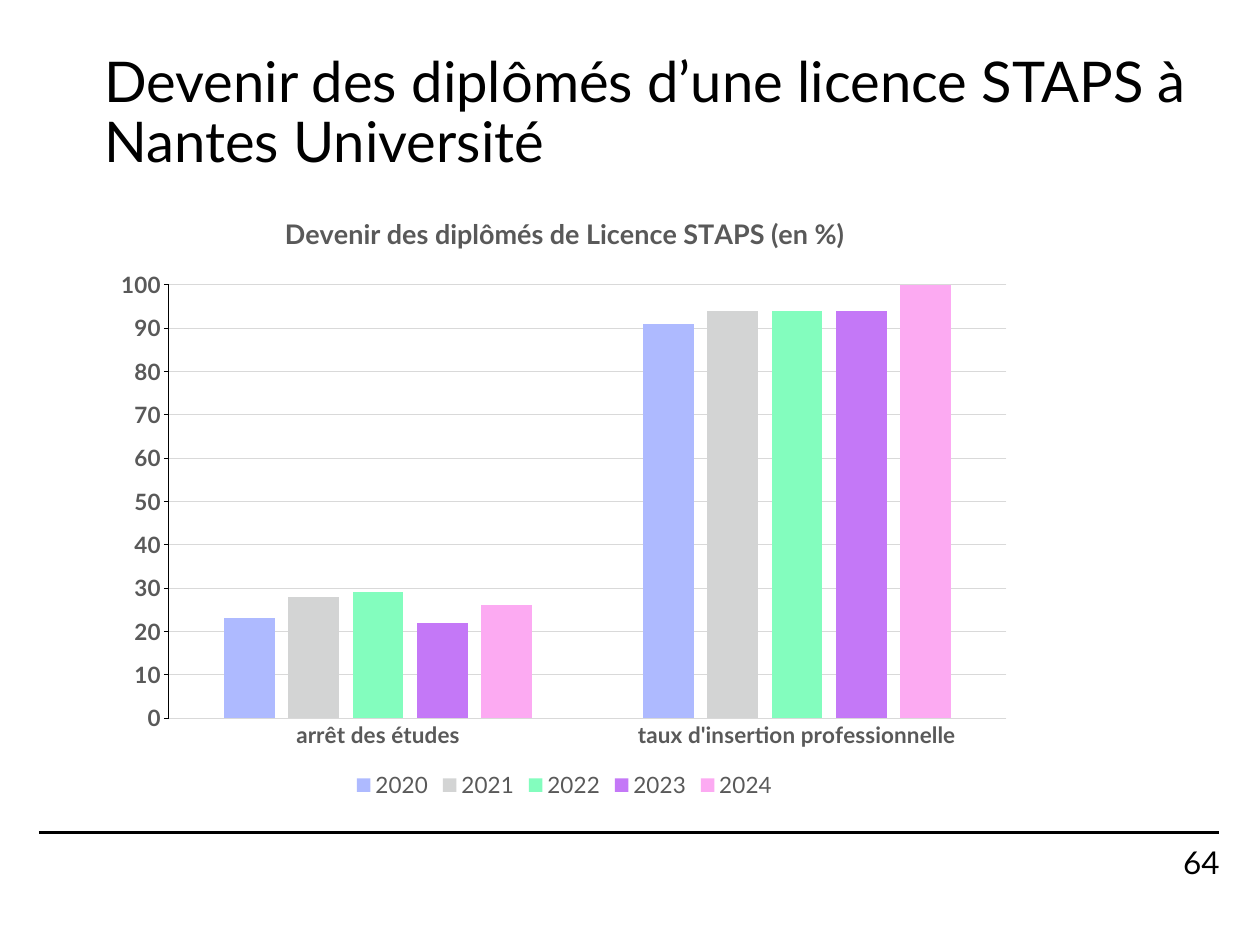
from dataclasses import dataclass

from lxml import etree
from pptx import Presentation
from pptx.chart.data import CategoryChartData
from pptx.dml.color import RGBColor
from pptx.enum.chart import XL_CHART_TYPE, XL_LEGEND_POSITION, XL_TICK_MARK
from pptx.enum.shapes import MSO_CONNECTOR
from pptx.enum.text import MSO_ANCHOR, PP_ALIGN
from pptx.oxml.ns import qn
from pptx.util import Inches, Pt

COLUMNS = XL_CHART_TYPE.COLUMN_CLUSTERED
LEGEND_BOTTOM = XL_LEGEND_POSITION.BOTTOM
TICK_NONE, TICK_OUTSIDE = XL_TICK_MARK.NONE, XL_TICK_MARK.OUTSIDE
STRAIGHT = MSO_CONNECTOR.STRAIGHT
MIDDLE = MSO_ANCHOR.MIDDLE
LEFT, RIGHT = PP_ALIGN.LEFT, PP_ALIGN.RIGHT


@dataclass(frozen=True)
class Theme:
    font: str = "Lato"
    ink: str = "000000"
    label: str = "595959"
    grid: str = "D9D9D9"
    title_size: int = 50
    number_size: int = 28
    chart_title_size: int = 24
    chart_size: int = 20
    rule_width: float = 2
    hairline: float = 0.75


THEME = Theme()

CATEGORIES = ["arrêt des études", "taux d'insertion professionnelle"]
# Year, values in percent, column colour
YEARS = [
    ("2020", (23, 91), "AEBAFF"),
    ("2021", (28, 94), "D3D4D4"),
    ("2022", (29, 94), "83FDBE"),
    ("2023", (22, 94), "C478F7"),
    ("2024", (26, 100), "FCAAF2"),
]
# Plot area as fractions of the chart frame
PLOT_AREA = {"x": 0.07, "y": 0.15, "w": 0.91, "h": 0.71}


def set_font(font, size, color, bold=False):
    font.name = THEME.font
    font.size = Pt(size)
    font.bold = bold
    font.color.rgb = RGBColor.from_string(color)


def set_line(line, color, width):
    line.color.rgb = RGBColor.from_string(color)
    line.width = Pt(width)


def place(shape, left, top, width, height):
    shape.left, shape.top = Inches(left), Inches(top)
    shape.width, shape.height = Inches(width), Inches(height)


def write_text(shape, text, size, alignment):
    frame = shape.text_frame
    frame.word_wrap = True
    frame.vertical_anchor = MIDDLE
    frame.margin_left = frame.margin_right = 0
    frame.margin_top = frame.margin_bottom = 0
    paragraph = frame.paragraphs[0]
    paragraph.text = text
    paragraph.alignment = alignment
    set_font(paragraph.font, size, THEME.ink)
    return paragraph


def add_title(slide, text):
    title = slide.shapes.title
    place(title, 1.29, 0.44, 13.73, 1.95)
    paragraph = write_text(title, text, THEME.title_size, LEFT)
    paragraph.line_spacing = 0.9


def add_footer(slide, number):
    rule = slide.shapes.add_connector(
        STRAIGHT, Inches(0.48), Inches(10.3), Inches(15.08), Inches(10.3))
    set_line(rule.line, THEME.ink, THEME.rule_width)
    etree.SubElement(rule.line._get_or_add_ln().getparent(), qn("a:effectLst"))
    box = slide.shapes.add_textbox(
        Inches(12.8), Inches(10.43), Inches(2.29), Inches(0.47))
    write_text(box, number, THEME.number_size, RIGHT)


def set_plot_layout(chart):
    plot_area = chart._chartSpace.chart.plotArea
    for old_layout in plot_area.findall(qn("c:layout")):
        plot_area.remove(old_layout)
    layout = etree.Element(qn("c:layout"))
    plot_area.insert(0, layout)
    manual = etree.SubElement(layout, qn("c:manualLayout"))
    settings = {"layoutTarget": "inner", "xMode": "edge", "yMode": "edge"}
    for tag, value in {**settings, **PLOT_AREA}.items():
        etree.SubElement(manual, qn(f"c:{tag}")).set("val", str(value))


def format_axis(axis, tick_mark, line_color):
    axis.major_tick_mark = tick_mark
    axis.minor_tick_mark = TICK_NONE
    set_line(axis.format.line, line_color, THEME.hairline)
    set_font(axis.tick_labels.font, THEME.chart_size, THEME.label, bold=True)


def add_outcome_chart(slide):
    data = CategoryChartData(number_format="0")
    data.categories = CATEGORIES
    for year, values, _ in YEARS:
        data.add_series(year, values)
    chart = slide.shapes.add_chart(
        COLUMNS, Inches(1.29), Inches(2.39), Inches(11.39), Inches(7.55),
        data).chart
    set_font(chart.font, THEME.chart_size, THEME.ink)

    # Chart title and legend
    chart.has_title = True
    paragraph = chart.chart_title.text_frame.paragraphs[0]
    paragraph.text = "Devenir des diplômés de Licence STAPS (en %)"
    set_font(paragraph.font, THEME.chart_title_size, THEME.label, bold=True)
    chart.chart_title.include_in_layout = False
    chart.has_legend = True
    chart.legend.position = LEGEND_BOTTOM
    chart.legend.include_in_layout = False
    set_font(chart.legend.font, THEME.chart_size, THEME.label)

    # Axes
    format_axis(chart.category_axis, TICK_NONE, THEME.grid)
    value_axis = chart.value_axis
    format_axis(value_axis, TICK_OUTSIDE, THEME.ink)
    value_axis.minimum_scale, value_axis.maximum_scale = 0, 100
    value_axis.major_unit = 10
    value_axis.tick_labels.number_format = "0"
    value_axis.tick_labels.number_format_is_linked = False
    set_line(value_axis.major_gridlines.format.line, THEME.grid, THEME.hairline)

    # Columns
    plot = chart.plots[0]
    plot.gap_width, plot.overlap = 219, -27
    plot.vary_by_categories = False
    for series, (_, _, color) in zip(plot.series, YEARS):
        series.format.fill.solid()
        series.format.fill.fore_color.rgb = RGBColor.from_string(color)
    set_plot_layout(chart)


def main():
    presentation = Presentation()
    presentation.slide_width = Inches(15.59)
    presentation.slide_height = Inches(11.69)
    title_only = presentation.slide_layouts[5]
    slide = presentation.slides.add_slide(title_only)
    add_footer(slide, "64")
    add_title(slide, "Devenir des diplômés d’une licence STAPS à Nantes Université")
    add_outcome_chart(slide)
    presentation.save("out.pptx")


if __name__ == "__main__":
    main()
